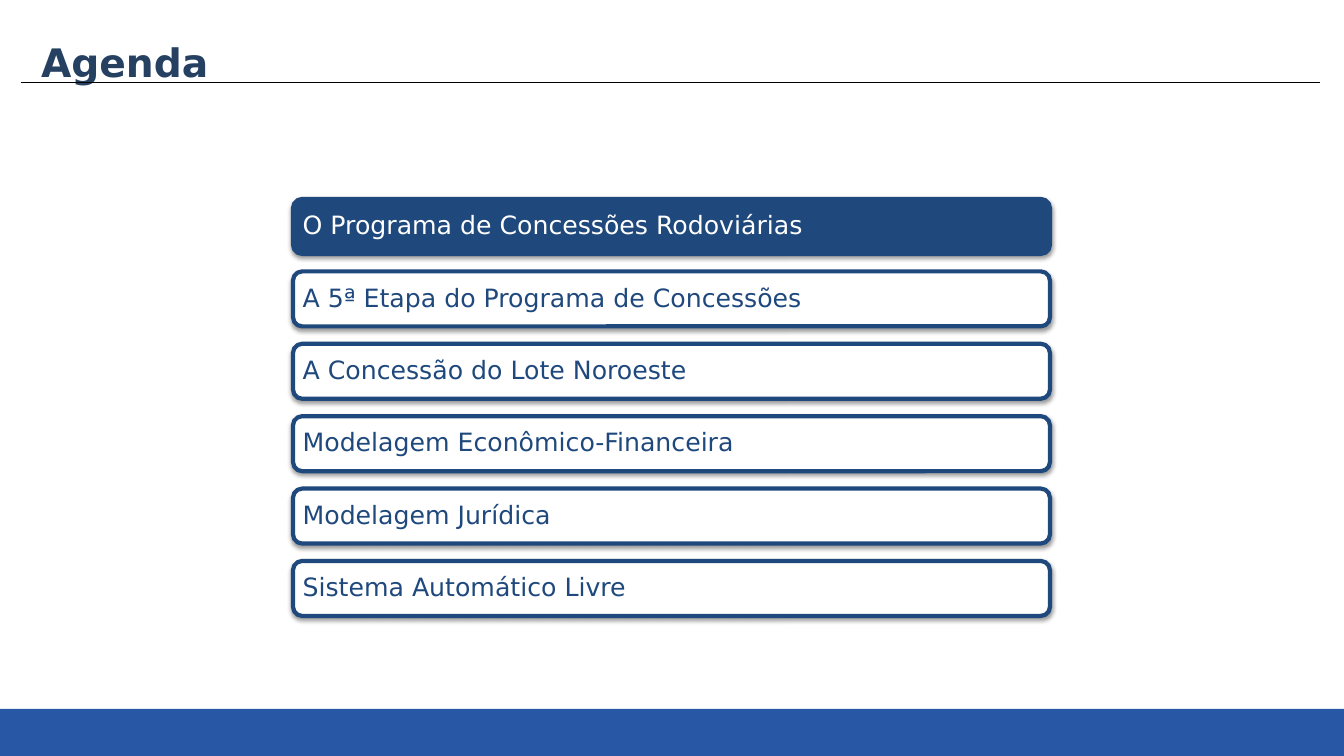
"""Build the agenda slide with its six topic bars."""
from dataclasses import dataclass

from lxml.etree import SubElement
from pptx import Presentation
from pptx.dml.color import RGBColor as RGB
from pptx.enum.shapes import MSO_CONNECTOR as LINK, MSO_SHAPE as FORM
from pptx.enum.text import MSO_ANCHOR as ANCHOR, MSO_AUTO_SIZE as FIT, PP_ALIGN as ALIGN
from pptx.oxml.ns import qn
from pptx.slide import Slide
from pptx.util import Emu, Pt

SCALE = 914400 / 100.8
WIDE, HIGH = 1344, 756
FONT = "DejaVu Sans"
WHITE = RGB(0xFF, 0xFF, 0xFF)
BLACK = RGB(0, 0, 0)
NAVY = RGB(0x1F, 0x49, 0x7D)
SLATE = RGB(0x25, 0x40, 0x61)
BLUE = RGB(0x28, 0x57, 0xA5)
FIRST, LAST = 199, 561
TOPICS = (
    "O Programa de Concessões Rodoviárias",
    "A 5ª Etapa do Programa de Concessões",
    "A Concessão do Lote Noroeste",
    "Modelagem Econômico-Financeira",
    "Modelagem Jurídica",
    "Sistema Automático Livre",
)


@dataclass(frozen=True)
class Topic:
    """One agenda entry."""
    text: str
    top: float
    fill: RGB
    ink: RGB


def px(size: float) -> Emu:
    """Turn px into EMU."""
    return Emu(round(size * SCALE))


def apply(item: object, values: dict) -> None:
    """Set each named value on the item."""
    for name, value in values.items():
        setattr(item, name, value)


def write(shape, text: str, frame: dict, para: dict, font: dict, ink: RGB) -> None:
    """Fill a shape with one formatted paragraph."""
    body = shape.text_frame
    body.text = text
    line = body.paragraphs[0]
    face = line.runs[0].font
    apply(body, {"word_wrap": True, "auto_size": FIT.NONE, **frame})
    apply(line, {"alignment": ALIGN.LEFT, **para})
    apply(face, {"name": FONT, **font})
    face.color.rgb = ink


def shade(shape) -> None:
    """Cast a soft shadow straight down."""
    shape.shadow.inherit = False
    effects = shape._element.spPr.find(qn("a:effectLst"))
    outer = SubElement(effects, qn("a:outerShdw"), blurRad="40000", dist="20000",
                       dir="5400000", rotWithShape="0")
    tint = SubElement(outer, qn("a:srgbClr"), val=str(BLACK))
    SubElement(tint, qn("a:alpha"), val="38000")


def head(slide: Slide) -> None:
    """Draw the footer band, the rule and the title."""
    band = slide.shapes.add_shape(FORM.RECTANGLE, px(0), px(709), px(WIDE), px(HIGH - 709))
    band.shadow.inherit = False
    band.fill.solid()
    band.fill.fore_color.rgb = BLUE
    band.line.fill.background()
    rule = slide.shapes.add_connector(LINK.STRAIGHT, px(21), px(83), px(1320), px(83))
    rule.line.color.rgb = BLACK
    rule.line.width = Pt(0.75)
    SubElement(rule._element.spPr, qn("a:effectLst"))
    title = slide.shapes.title
    apply(title, {"left": px(31), "top": px(30), "width": px(903), "height": px(69)})
    write(title, "Agenda", {"vertical_anchor": ANCHOR.TOP, "margin_top": px(8)},
          {}, {"size": Pt(28), "bold": True}, SLATE)


def draw(slide: Slide, topic: Topic) -> None:
    """Draw one topic bar."""
    bar = slide.shapes.add_shape(FORM.ROUNDED_RECTANGLE, px(293), px(topic.top),
                                 px(757), px(55))
    bar.fill.solid()
    bar.fill.fore_color.rgb = topic.fill
    bar.line.color.rgb = NAVY
    bar.line.width = Pt(3)
    shade(bar)
    edges = {f"margin_{side}": px(7) for side in ("left", "top", "right", "bottom")}
    write(bar, topic.text, {"vertical_anchor": ANCHOR.MIDDLE, **edges},
          {"line_spacing": 0.9}, {"size": Pt(18)}, topic.ink)


def main() -> None:
    """Build and save the slide."""
    deck = Presentation()
    apply(deck, {"slide_width": px(WIDE), "slide_height": px(HIGH)})
    slide = deck.slides.add_slide(deck.slide_layouts.get_by_name("Title Only"))
    head(slide)
    step = (LAST - FIRST) / (len(TOPICS) - 1)
    for row, text in enumerate(TOPICS):
        fill, ink = (WHITE, NAVY) if row else (NAVY, WHITE)
        draw(slide, Topic(text, FIRST + row * step, fill, ink))
    deck.save("out.pptx")


if __name__ == "__main__":
    main()
